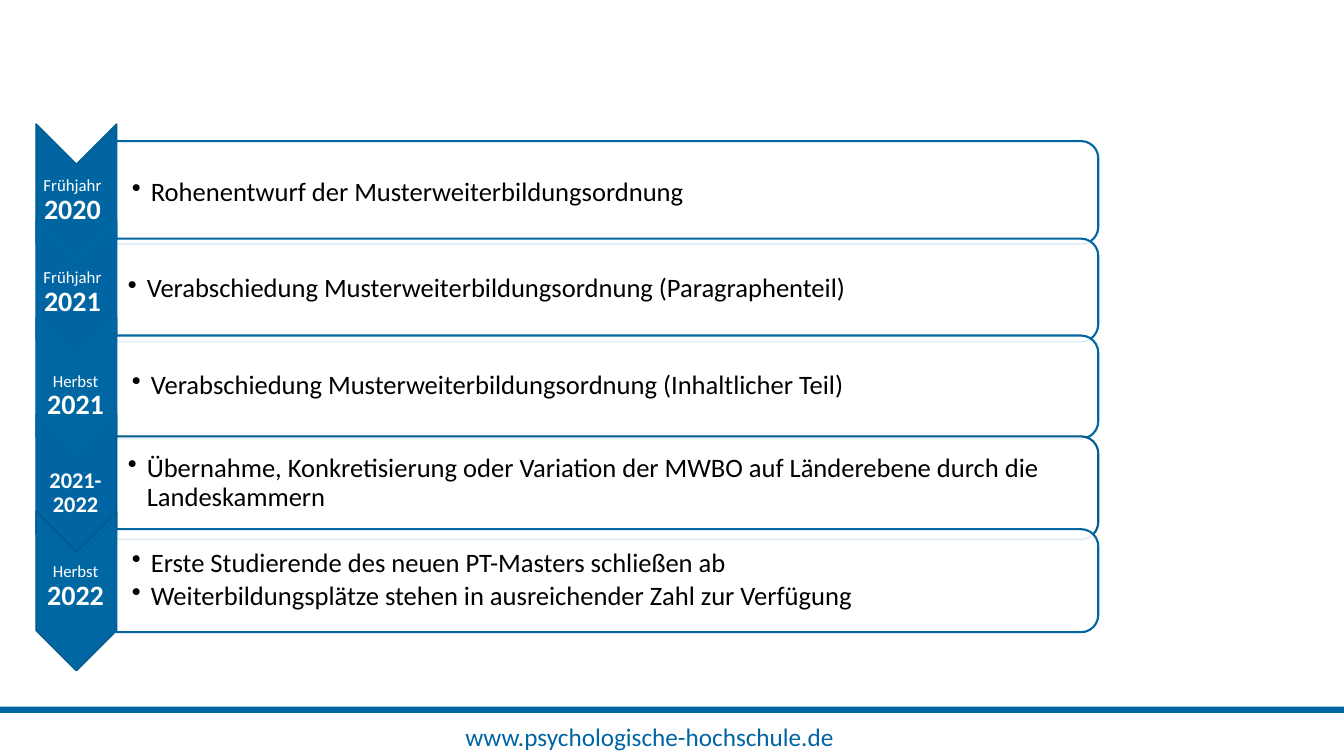
from dataclasses import dataclass

from lxml import etree
from pptx import Presentation
from pptx.dml.color import RGBColor
from pptx.enum import shapes, text
from pptx.oxml import ns
from pptx.util import Pt

BLUE = RGBColor(0x00, 0x65, 0xA2)
AZURE = RGBColor(0x00, 0x67, 0xA2)
DEEP = RGBColor(0x00, 0x65, 0xA1)
DARK = RGBColor(0x00, 0x5B, 0x8E)
WHITE = RGBColor(0xFF, 0xFF, 0xFF)
BLACK = RGBColor(0x00, 0x00, 0x00)
FONT = "Calibri"

PITCH = 69.2  # distance from one step to the next


@dataclass
class Part:
    words: str
    size: float
    bold: bool = False


@dataclass
class Step:
    label: list[Part]
    points: list[str]
    left: float  # label box
    top: float
    mid: float  # centre height of the panel
    fill: RGBColor
    edge: RGBColor
    frame: RGBColor


def season(name: str, year: str) -> list[Part]:
    return [Part(name, 12), Part(year, 20, True)]


STEPS = [
    Step(season("Frühjahr", "2020"),
         ["Rohenentwurf der Musterweiterbildungsordnung"],
         23, 126.8, 137.6, DEEP, DARK, DEEP),
    Step(season("Frühjahr", "2021"),
         ["Verabschiedung Musterweiterbildungsordnung (Paragraphenteil)"],
         23, 192.4, 207.3, BLUE, AZURE, BLUE),
    Step(season("Herbst", "2021"),
         ["Verabschiedung Musterweiterbildungsordnung (Inhaltlicher Teil)"],
         25.2, 266.5, 276.5, AZURE, BLUE, AZURE),
    Step([Part("2021-", 16, True), Part("2022", 16, True)],
         ["Übernahme, Konkretisierung oder Variation der MWBO auf "
          "Länderebene durch die Landeskammern"],
         25.2, 335.5, 348.5, BLUE, DEEP, DARK),
    Step(season("Herbst", "2022"),
         ["Erste Studierende des neuen PT-Masters schließen ab",
          "Weiterbildungsplätze stehen in ausreichender Zahl zur Verfügung"],
         25.2, 402.6, 414.8, AZURE, DARK, DEEP),
]


def add_run(para, part: Part, color: RGBColor) -> None:
    run = para.add_run()
    run.text = part.words
    font = run.font
    font.name, font.size, font.bold = FONT, Pt(part.size), part.bold
    font.color.rgb = color


def add_box(slide, left: float, top: float, width: float, height: float,
            inset: float):
    frame = slide.shapes.add_textbox(
        Pt(left), Pt(top), Pt(width), Pt(height)).text_frame
    frame.word_wrap = True
    frame.vertical_anchor = text.MSO_ANCHOR.MIDDLE
    frame.margin_left = Pt(inset)
    frame.margin_top = frame.margin_right = frame.margin_bottom = Pt(0.7)
    return frame


def add_turned(slide, kind, mid_x: float, mid_y: float, width: float,
               height: float, fill: RGBColor, edge: RGBColor, line: float):
    """Centre a shape on a point and turn it by a quarter."""
    shape = slide.shapes.add_shape(
        kind, Pt(mid_x - width / 2), Pt(mid_y - height / 2),
        Pt(width), Pt(height))
    shape.rotation = 90
    shape.shadow.inherit = False
    shape.fill.solid()
    shape.fill.fore_color.rgb = fill
    shape.line.color.rgb = edge
    shape.line.width = Pt(line)
    return shape


def set_bullet(para) -> None:
    props = para._p.get_or_add_pPr()
    props.set("marL", str(Pt(13.5)))
    props.set("indent", str(Pt(-13.5)))
    etree.SubElement(props, ns.qn("a:buChar")).set("char", "•")


def add_label(slide, step: Step) -> None:
    frame = add_box(slide, step.left, step.top, 57.6, 33.8, 0.7)
    para = frame.paragraphs[0]
    para.alignment = text.PP_ALIGN.CENTER
    para.line_spacing = 0.9
    for idx, part in enumerate(step.label):
        if idx:
            para.add_line_break()
        add_run(para, part, WHITE)


def add_points(slide, step: Step, row: int) -> None:
    left = 80.6 if row % 2 else 83.5
    frame = add_box(slide, left, 104.4 + PITCH * row, 698.4, 66.2, 10.8)
    for idx, words in enumerate(step.points):
        para = frame.add_paragraph() if idx else frame.paragraphs[0]
        para.level = 1
        para.line_spacing = 0.9
        para.space_after = Pt(2.9)
        set_bullet(para)
        add_run(para, Part(words, 19), BLACK)


def add_step(slide, step: Step, row: int) -> None:
    kinds = shapes.MSO_SHAPE
    add_turned(slide, kinds.CHEVRON, 54.5, 145.4 + PITCH * row, 113.8, 57.6,
               step.fill, step.edge, 1)
    add_label(slide, step)
    panel = add_turned(slide, kinds.ROUND_2_SAME_RECTANGLE, 433.8, step.mid,
                       73.6, 701.3, WHITE, step.frame, 1.5)
    tint = panel._element.spPr.find(ns.qn("a:solidFill"))[0]
    etree.SubElement(tint, ns.qn("a:alpha")).set("val", "90000")
    add_points(slide, step, row)


def add_footer(slide) -> None:
    bar = slide.shapes.add_shape(
        shapes.MSO_SHAPE.RECTANGLE, Pt(0), Pt(504.8), Pt(960), Pt(4.5))
    bar.shadow.inherit = False
    bar.fill.solid()
    bar.fill.fore_color.rgb = AZURE
    bar.line.fill.background()
    para = add_box(slide, 11.5, 512, 905, 28, 0.7).paragraphs[0]
    para.alignment = text.PP_ALIGN.CENTER
    add_run(para, Part("www.psychologische-hochschule.de", 18), BLUE)


def main() -> None:
    deck = Presentation()
    deck.slide_width, deck.slide_height = Pt(960), Pt(540)
    slide = deck.slides.add_slide(deck.slide_layouts[6])
    # Footer bar and address
    add_footer(slide)
    # Timeline, each step over the one before
    for row, step in enumerate(STEPS):
        add_step(slide, step, row)
    deck.save("out.pptx")


if __name__ == "__main__":
    main()
